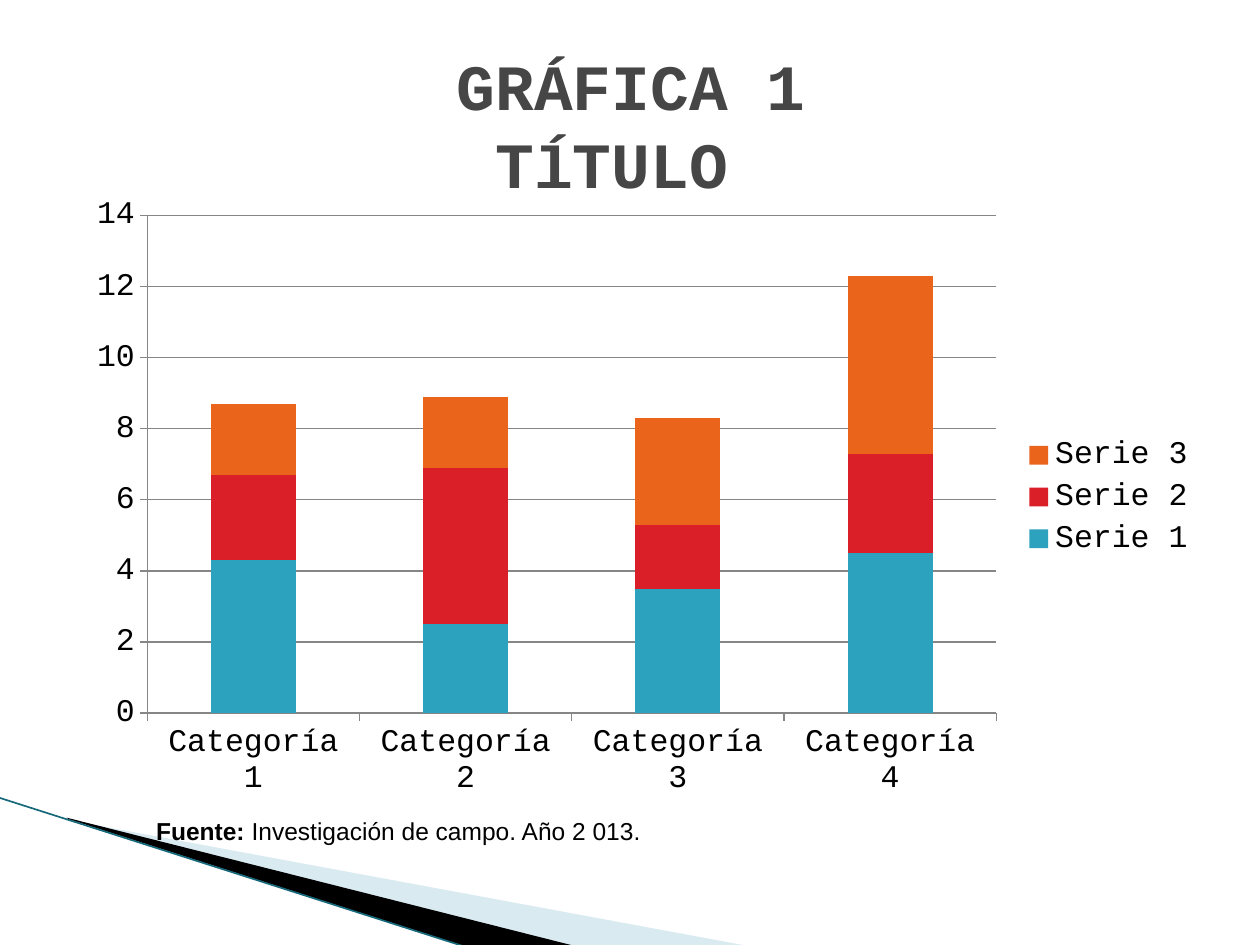
"""Builds a slide with a stacked column chart, its title, its source note and a corner ornament."""
from lxml.etree import SubElement
from pptx import Presentation
from pptx.chart.data import CategoryChartData
from pptx.dml.color import RGBColor
from pptx.enum.chart import XL_CHART_TYPE as ChartType, XL_LEGEND_POSITION as LegendPosition, XL_TICK_MARK as TickMark
from pptx.enum.shapes import MSO_CONNECTOR as Connector
from pptx.enum.text import MSO_ANCHOR as Anchor, PP_ALIGN as Align
from pptx.oxml.ns import qn
from pptx.util import Inches, Pt

COLORS = {"title": "464646", "text": "000000", "axis": "868686", "pale": "A0CBDC",
          "dark": "000000", "edge": "16697A"}
TITLE = "GRÁFICA 1\vTĺTULO "
SOURCE = [("Fuente: ", True), ("Investigación de campo. Año 2 013.", False)]
CATEGORIES = [f"Categoría {number}" for number in range(1, 5)]
SERIES = [("Serie 1", (4.3, 2.5, 3.5, 4.5), "2DA2BF"),
          ("Serie 2", (2.4, 4.4, 1.8, 2.8), "DA1F28"),
          ("Serie 3", (2, 2, 3, 5), "EB641B")]
WEDGES = [("pale", 40, [(0.55, 6.51), (5.95, 7.51), (4.56, 7.51), (0.55, 6.5)]),
          ("dark", 100, [(0.53, 6.49), (4.57, 7.51), (3.72, 7.52), (0.54, 6.5)])]
EDGE = (-0.01, 6.33, 3.71, 7.52)
TITLE_BOX = (0.51, 0.36, 9, 1.24)
CHART_BOX = (0.59, 1.47, 9, 4.95)
SOURCE_BOX = (1.14, 6.43, 6.38, 0.34)


def color(name):
    return RGBColor.from_string(COLORS.get(name, name))


def inches(values):
    return [Inches(value) for value in values]


def style(font, face, size, name, bold=None):
    font.name, font.size, font.bold = face, Pt(size), bold
    font.color.rgb = color(name)


def add_wedge(slide, name, opacity, points):
    start, *others = [tuple(inches(point)) for point in points]
    builder = slide.shapes.build_freeform(*start)
    builder.add_line_segments(others, close=True)
    shape = builder.convert_to_shape()
    shape.shadow.inherit = False
    shape.fill.solid()
    shape.fill.fore_color.rgb = color(name)
    shape.line.fill.background()
    if opacity < 100:
        fill = shape.fill._xPr.find(qn("a:solidFill"))
        SubElement(fill[0], qn("a:alpha"), val=str(opacity * 1000))


def add_edge(slide):
    line = slide.shapes.add_connector(Connector.STRAIGHT, *inches(EDGE))
    line.line.color.rgb = color("edge")
    line.line.width = Pt(0.95)
    SubElement(line._element.spPr, qn("a:effectLst"))


def add_chart(slide):
    data = CategoryChartData()
    data.categories = CATEGORIES
    for name, values, _ in SERIES:
        data.add_series(name, values)
    chart = slide.shapes.add_chart(ChartType.COLUMN_STACKED, *inches(CHART_BOX), data).chart
    style(chart.font, "Courier New", 18, "text")
    chart.has_title = False
    chart.has_legend = True
    chart.legend.position = LegendPosition.RIGHT
    chart.legend.include_in_layout = False
    plot = chart.plots[0]
    plot.gap_width, plot.overlap, plot.vary_by_categories = 150, 100, False
    for series, (_, _, name) in zip(plot.series, SERIES):
        series.format.fill.solid()
        series.format.fill.fore_color.rgb = color(name)
    for axis in (chart.category_axis, chart.value_axis):
        axis.major_tick_mark, axis.minor_tick_mark = TickMark.OUTSIDE, TickMark.NONE
        axis.format.line.color.rgb = color("axis")
    chart.value_axis.has_major_gridlines = True
    chart.value_axis.major_gridlines.format.line.color.rgb = color("axis")


def add_text_box(slide, box, anchor):
    frame = slide.shapes.add_textbox(*inches(box)).text_frame
    frame.word_wrap, frame.vertical_anchor = True, anchor
    return frame.paragraphs[0]


def main():
    presentation = Presentation()
    presentation.slide_width, presentation.slide_height = inches((10, 7.5))
    slide = presentation.slides.add_slide(presentation.slide_layouts[6])
    for wedge in WEDGES:
        add_wedge(slide, *wedge)
    add_edge(slide)
    add_chart(slide)

    title = add_text_box(slide, TITLE_BOX, Anchor.MIDDLE)
    title.text, title.alignment = TITLE, Align.CENTER
    style(title.font, "Courier New", 36.9, "title", True)

    source = add_text_box(slide, SOURCE_BOX, Anchor.TOP)
    for text, bold in SOURCE:
        run = source.add_run()
        run.text = text
        style(run.font, "Arial", 14, "text", bold)
    presentation.save("out.pptx")


if __name__ == "__main__":
    main()
